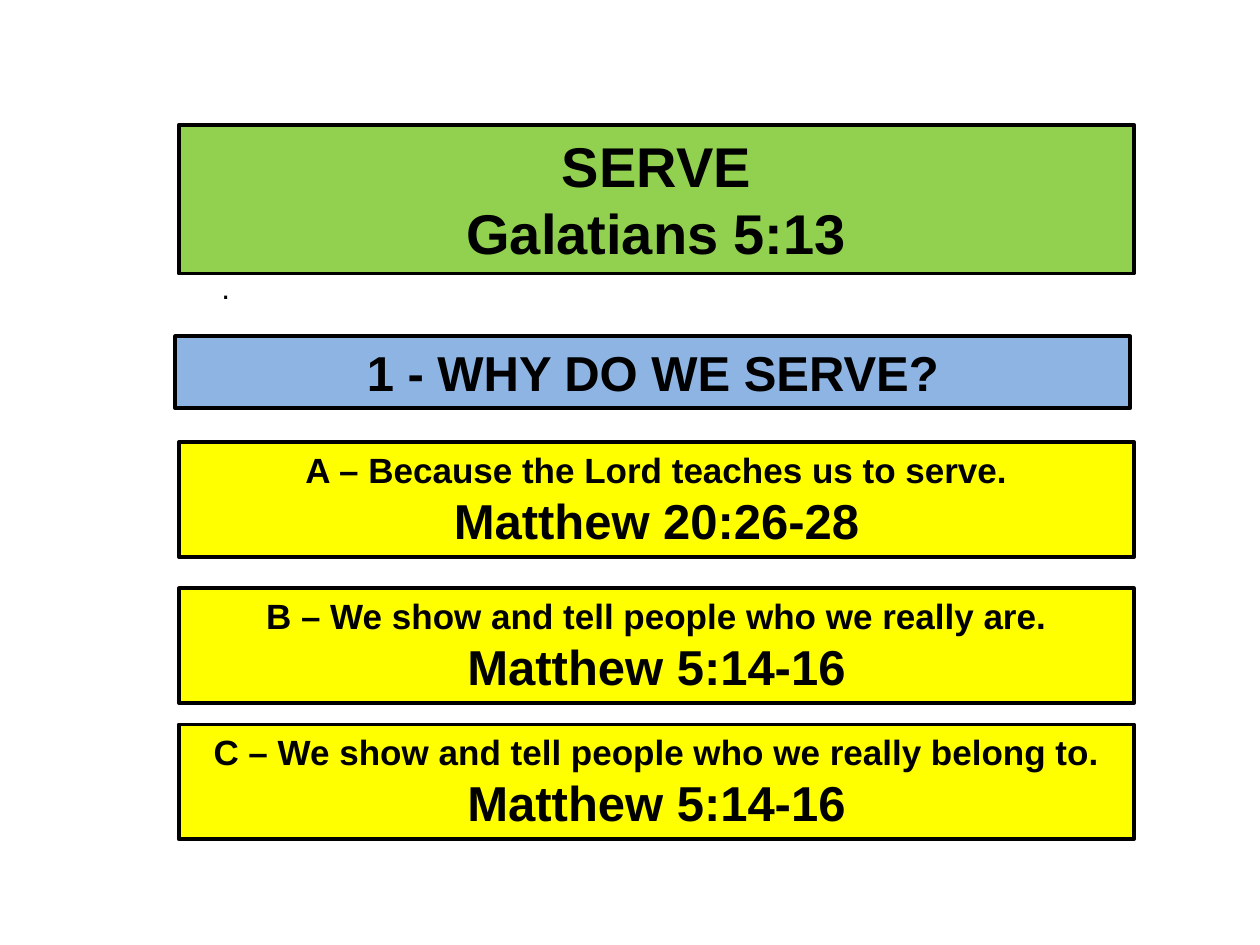
from dataclasses import dataclass
from pptx import Presentation
from pptx.dml.color import RGBColor as Rgb
from pptx.enum.shapes import MSO_SHAPE as Kind
from pptx.enum.text import MSO_ANCHOR as Anchor, MSO_AUTO_SIZE as Fit, PP_ALIGN as Align
from pptx.util import Inches, Pt


@dataclass(frozen=True)
class Theme:
    font: str = "Arial"
    ink: str = "000000"
    green: str = "92D050"
    blue: str = "8EB4E3"
    yellow: str = "FFFF00"
    big: int = 32
    head: int = 28
    body: int = 20
    small: int = 18
    edge: float = 2.25


class Deck:
    cols, rows = 100, 75

    def __init__(self, theme):
        self.theme = theme
        self.file = Presentation()
        self.file.slide_width = Inches(10)
        self.file.slide_height = Inches(7.5)
        self.slide = self.file.slides.add_slide(self.file.slide_layouts[5])

    def area(self, col, row, wide, high):
        unit_x = self.file.slide_width / self.cols
        unit_y = self.file.slide_height / self.rows
        return [round(n) for n in (col * unit_x, row * unit_y, wide * unit_x, high * unit_y)]

    def label(self, shape, lines, align=Align.CENTER, bold=True, wrap=True):
        frame = shape.text_frame
        frame.word_wrap = wrap
        frame.auto_size = Fit.SHAPE_TO_FIT_TEXT
        frame.vertical_anchor = Anchor.TOP
        for i, (text, size) in enumerate(lines):
            para = frame.add_paragraph() if i else frame.paragraphs[0]
            para.alignment = align
            run = para.add_run()
            run.text = text
            font = run.font
            font.name, font.size, font.bold = self.theme.font, Pt(size), bold
            font.color.rgb = Rgb.from_string(self.theme.ink)

    def paint(self, shape, fill):
        shape.fill.solid()
        shape.fill.fore_color.rgb = Rgb.from_string(fill)
        shape.line.color.rgb = Rgb.from_string(self.theme.ink)
        shape.line.width = Pt(self.theme.edge)

    def title(self, area, fill, lines):
        shape = self.slide.shapes.title
        shape.left, shape.top, shape.width, shape.height = self.area(*area)
        self.paint(shape, fill)
        self.label(shape, lines)

    def bar(self, area, fill, lines):
        shape = self.slide.shapes.add_shape(Kind.RECTANGLE, *self.area(*area))
        shape.shadow.inherit = False
        self.paint(shape, fill)
        self.label(shape, lines)

    def note(self, area, text):
        shape = self.slide.shapes.add_textbox(*self.area(*area))
        self.label(shape, [(text, self.theme.small)], Align.LEFT, False, False)


def main():
    look = Theme()
    deck = Deck(look)
    left, wide = 14.2, 75.8
    deck.title((left, 9.9, wide, 11.8), look.green,
               [("SERVE", look.big), ("Galatians 5:13", look.big)])
    deck.note((16.6, 20.8, 2.7, 4), ".")
    deck.bar((13.9, 26.7, wide, 5.7), look.blue, [("1 - WHY DO WE SERVE?", look.head)])
    points = [
        (35.1, "A – Because the Lord teaches us to serve.", "Matthew 20:26-28"),
        (46.7, "B – We show and tell people who we really are.", "Matthew 5:14-16"),
        (57.5, "C – We show and tell people who we really belong to.", "Matthew 5:14-16"),
    ]
    for row, point, verse in points:
        deck.bar((left, row, wide, 9.1), look.yellow,
                 [(point, look.body), (verse, look.head)])
    deck.file.save("out.pptx")


if __name__ == "__main__":
    main()
